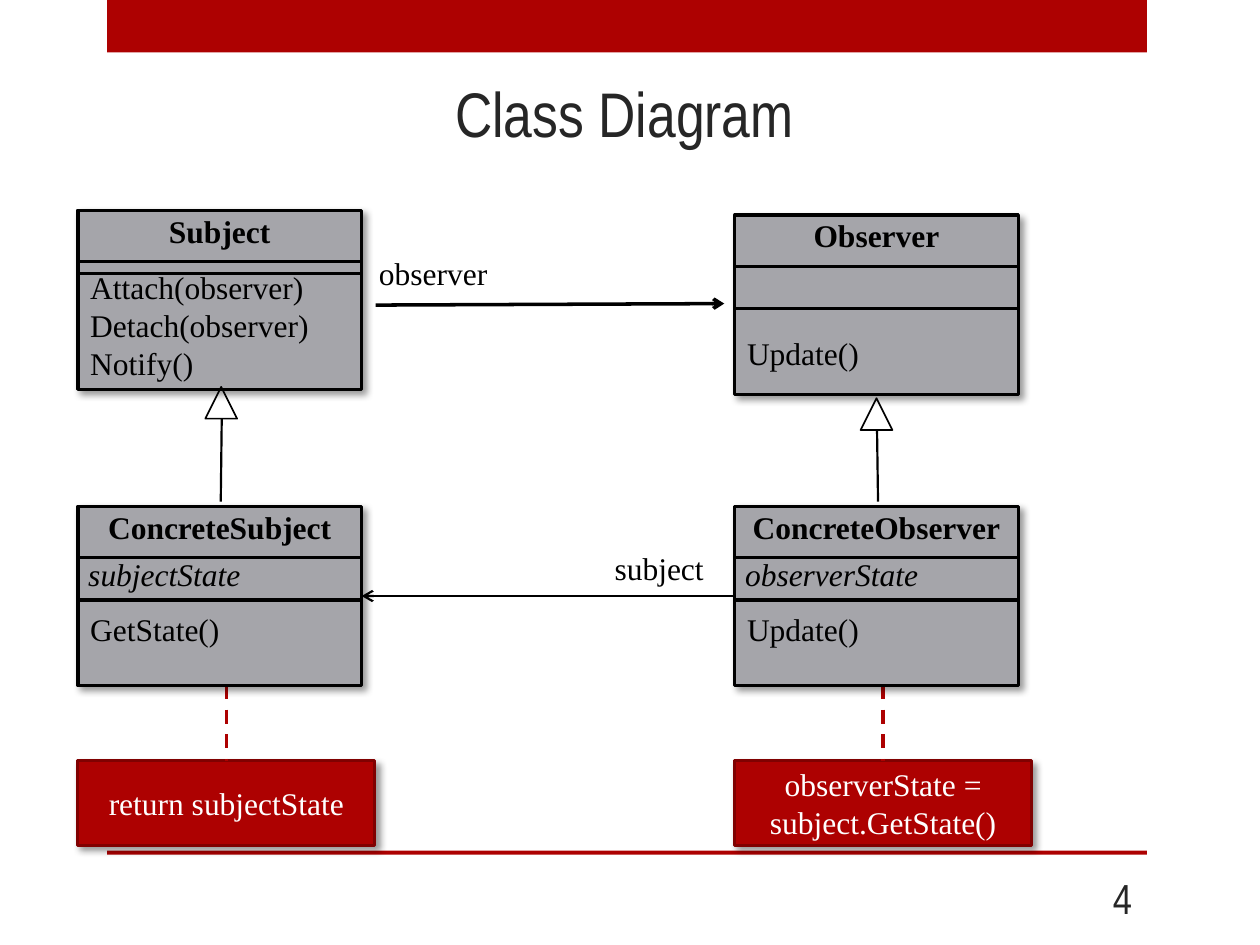
from dataclasses import dataclass

from pptx import Presentation
from pptx.dml.color import RGBColor
from pptx.enum.dml import MSO_LINE_DASH_STYLE as DASH
from pptx.enum.shapes import MSO_CONNECTOR, MSO_SHAPE as SHAPE
from pptx.enum.text import MSO_ANCHOR as ANCHOR, MSO_AUTO_SIZE as AUTO, PP_ALIGN as ALIGN
from pptx.oxml import parse_xml
from pptx.oxml.ns import nsdecls, qn
from pptx.util import Cm, Pt


@dataclass(frozen=True)
class Theme:
    """Colours, fonts and type sizes of the slide."""
    red: str = "AD0101"
    dark_red: str = "800101"
    grey: str = "A5A5AA"
    ink: str = "262626"
    black: str = "000000"
    white: str = "FFFFFF"
    heading: str = "Arial Narrow"
    body: str = "Times New Roman"
    title_size: int = 36
    number_size: int = 24
    body_size: int = 18


T = Theme()
LEFT, RIGHT = 1.57, 14.81
CLASS_W, CLASS_H = 5.72, 3.61
NOTE_W, NOTE_H, NOTE_TOP = 5.99, 1.7, 15.34
LABEL_H = 1.02


def rgb(value):
    """Turn a hex string into a colour."""
    return RGBColor.from_string(value)


def format_text(tf, color, size=T.body_size, font=T.body, align=ALIGN.LEFT, bold=False, italic=False):
    """Format every run of a text frame alike."""
    for p in tf.paragraphs:
        p.alignment = align
        for r in p.runs:
            r.font.name, r.font.size = font, Pt(size)
            r.font.bold, r.font.italic = bold, italic
            r.font.color.rgb = rgb(color)


def add_label(s, text, x, y, w, h=LABEL_H, **style):
    """Add unwrapped black text that fits its box."""
    sp = s.shapes.add_textbox(Cm(x), Cm(y), Cm(w), Cm(h))
    tf = sp.text_frame
    tf.text = text
    tf.word_wrap = False
    tf.auto_size = AUTO.SHAPE_TO_FIT_TEXT
    format_text(tf, T.black, **style)


def add_box(s, x, y, w, h, fill=None, line=None, width=1, kind=SHAPE.RECTANGLE):
    """Add a flat preset shape with optional fill and outline."""
    sp = s.shapes.add_shape(kind, Cm(x), Cm(y), Cm(w), Cm(h))
    sp.shadow.inherit = False
    if fill:
        sp.fill.solid()
        sp.fill.fore_color.rgb = rgb(fill)
    else:
        sp.fill.background()
    if line:
        sp.line.color.rgb = rgb(line)
        sp.line.width = Pt(width)
    else:
        sp.line.fill.background()
    return sp


def add_shadow(sp):
    """Give a shape a soft shadow to the lower right."""
    sp._element.spPr.find(qn("a:effectLst")).append(parse_xml(
        f'<a:outerShdw {nsdecls("a")} blurRad="50800" dist="38100" dir="2700000" algn="tl" rotWithShape="0">'
        f'<a:srgbClr val="{T.black}"><a:alpha val="40000"/></a:srgbClr></a:outerShdw>'))


def add_line(s, x1, y1, x2, y2, width=2, color=T.black, dashed=False, arrow=False):
    """Add a straight connector, dashed or with an open arrowhead if asked."""
    c = s.shapes.add_connector(MSO_CONNECTOR.STRAIGHT, Cm(x1), Cm(y1), Cm(x2), Cm(y2))
    c.line.color.rgb = rgb(color)
    c.line.width = Pt(width)
    if dashed:
        c.line.dash_style = DASH.DASH
    sp_pr = c._element.spPr
    if arrow:
        sp_pr.find(qn("a:ln")).append(parse_xml(f'<a:tailEnd {nsdecls("a")} type="arrow"/>'))
    sp_pr.append(parse_xml(f'<a:effectLst {nsdecls("a")}/>'))
    return c


def add_class(s, x, y, name, name_w, methods, methods_w, methods_dy, attribute="", attribute_w=0, split=1.88):
    """Add a class box with name, attribute and method compartments."""
    sp = add_box(s, x, y, CLASS_W, CLASS_H, T.grey, T.black, 2)
    add_shadow(sp)
    for dy in (1.03, split):
        add_line(s, x, y + dy, x + CLASS_W, y + dy)
    add_label(s, name, x + (CLASS_W - name_w) / 2, y - 0.1, name_w, align=ALIGN.CENTER, bold=True)
    if attribute:
        add_label(s, attribute, x - 0.04, y + 0.86, attribute_w, italic=True)
    lines = methods.count("\n") + 1
    add_label(s, methods, x, y + methods_dy, methods_w, LABEL_H + 0.77 * (lines - 1))
    return sp


def add_note(s, x, text):
    """Add a code note with the dashed line that ties it to the class above."""
    sp = add_box(s, x, NOTE_TOP, NOTE_W, NOTE_H, T.red, T.dark_red, 1.75)
    add_shadow(sp)
    tf = sp.text_frame
    tf.text = text
    tf.word_wrap = True
    tf.vertical_anchor = ANCHOR.MIDDLE
    format_text(tf, T.white, align=ALIGN.CENTER)
    middle = x + NOTE_W / 2
    add_line(s, middle, 13.31, middle, NOTE_TOP, color=T.red, dashed=True).end_connect(sp, 0)


def add_inheritance(s, x, y, start_x, end_x):
    """Add a hollow triangle and the stem that rises to it."""
    side = 0.64
    add_box(s, x, y, side, side, line=T.black, kind=SHAPE.ISOSCELES_TRIANGLE)
    add_line(s, end_x, y + side, start_x, 10.11, 1.25)


def add_title(s, text):
    """Place and format the title placeholder."""
    sp = s.shapes.title
    sp.left, sp.top, sp.width, sp.height = Cm(2.11), Cm(1.35), Cm(20.96), Cm(1.83)
    sp.text_frame.text = text
    sp.text_frame.auto_size = AUTO.NONE
    format_text(sp.text_frame, T.ink, T.title_size, T.heading, ALIGN.CENTER)


def add_page_number(s, text):
    """Add the page number at the lower right."""
    tf = s.shapes.add_textbox(Cm(20.96), Cm(17.58), Cm(2.11), Cm(1.02)).text_frame
    tf.text = text
    tf.word_wrap = True
    tf.vertical_anchor = ANCHOR.MIDDLE
    format_text(tf, T.ink, T.number_size, T.heading, ALIGN.RIGHT)


def main():
    """Build the class diagram slide."""
    prs = Presentation()
    prs.slide_width, prs.slide_height = Cm(25.4), Cm(19.05)
    s = prs.slides.add_slide(prs.slide_layouts[5])
    for y, h in ((0, 1.06), (17.15, 0.08)):
        add_box(s, 2.16, y, 20.96, h, T.red)
    add_title(s, "Class Diagram")
    add_page_number(s, "4")

    add_note(s, LEFT, "return subjectState")
    add_note(s, RIGHT, "observerState = subject.GetState()")

    add_class(s, LEFT, 4.24, "Subject", 2.59, "Attach(observer)\nDetach(observer)\nNotify()", 4.98, 1.04, split=1.27)
    add_class(s, RIGHT, 4.34, "Observer", 3.07, "Update()", 2.79, 2.26)
    subject = add_class(s, LEFT, 10.21, "ConcreteSubject", 5.05, "GetState()", 3.15, 1.96, "subjectState", 3.61)
    observer = add_class(s, RIGHT, 10.21, "ConcreteObserver", 5.56, "Update()", 2.79, 1.96, "observerState", 4.04)

    add_inheritance(s, 4.14, 7.8, 4.45, 4.47)
    add_inheritance(s, 17.35, 8.03, 17.7, 17.68)

    add_line(s, 7.57, 6.15, 14.6, 6.12, arrow=True)
    add_label(s, "observer", 7.39, 5, 2.72)
    middle = 10.21 + CLASS_H / 2
    link = add_line(s, RIGHT, middle, LEFT + CLASS_W, middle, 1.25, arrow=True)
    link.begin_connect(observer, 1)
    link.end_connect(subject, 3)
    add_label(s, "subject", 12.14, 10.95, 2.34)
    prs.save("out.pptx")


if __name__ == "__main__":
    main()
